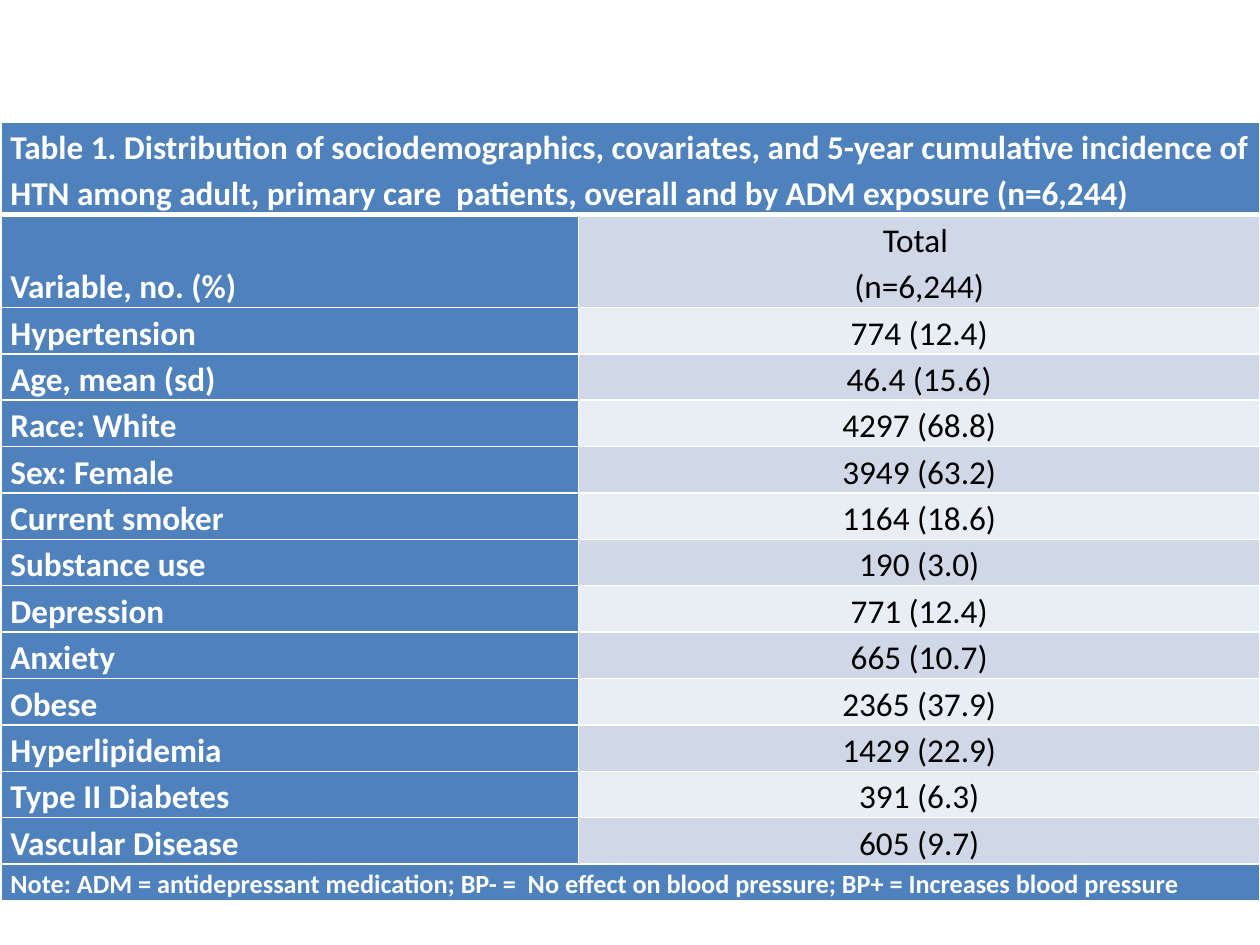
from pptx import Presentation
from pptx.dml.color import RGBColor
from pptx.enum.text import MSO_ANCHOR, PP_ALIGN
from pptx.oxml import parse_xml
from pptx.oxml.ns import nsdecls
from pptx.util import Cm, Pt

TITLE = ("Table 1. Distribution of sociodemographics, covariates, and 5-year cumulative "
         "incidence of HTN among adult, primary care  patients, overall and by ADM "
         "exposure (n=6,244)")
NOTE = ("Note: ADM = antidepressant medication; BP- =  No effect on blood pressure; "
        "BP+ = Increases blood pressure")
ROWS = [
    ("Variable, no. (%)", "Total \n(n=6,244)"),
    ("Hypertension", "774 (12.4)"),
    ("Age, mean (sd)", "46.4 (15.6)"),
    ("Race: White", "4297 (68.8)"),
    ("Sex: Female", "3949 (63.2)"),
    ("Current smoker", "1164 (18.6)"),
    ("Substance use", "190 (3.0)"),
    ("Depression", "771 (12.4)"),
    ("Anxiety", "665 (10.7)"),
    ("Obese", "2365 (37.9)"),
    ("Hyperlipidemia", "1429 (22.9)"),
    ("Type II Diabetes", "391 (6.3)"),
    ("Vascular Disease", "605 (9.7)"),
]
BLUE, WHITE, BLACK = "4F81BD", "FFFFFF", "000000"
BANDS = ("D0D8E8", "E9EDF4")
COLS = (11.63, 13.74)
HEIGHTS = [1.75, 1.75] + [0.84] * (len(ROWS) - 1) + [0.66]
TOP, HEIGHT = 2.46, 15.52


def rgb(value):
    return RGBColor.from_string(value)


def set_borders(cell, bottom):
    tc_pr = cell._tc.get_or_add_tcPr()
    for side, width in (("L", 1), ("R", 1), ("T", 1), ("B", bottom)):
        tc_pr.append(parse_xml(
            f'<a:ln{side} {nsdecls("a")} w="{Pt(width)}"><a:solidFill>'
            f'<a:srgbClr val="{WHITE}"/></a:solidFill></a:ln{side}>'))


def fill_cell(cell, text, fill=BLUE, color=WHITE, bold=True,
              align=PP_ALIGN.LEFT, size=19, bottom=1):
    set_borders(cell, bottom)
    cell.fill.solid()
    cell.fill.fore_color.rgb = rgb(fill)
    cell.margin_left = cell.margin_right = Cm(0.18)
    cell.margin_top = cell.margin_bottom = 0
    cell.vertical_anchor = MSO_ANCHOR.BOTTOM
    cell.text = text
    for p in cell.text_frame.paragraphs:
        p.alignment = align
        p.line_spacing = 1.15
        p.font.name = "Calibri"
        p.font.size = Pt(size)
        p.font.bold = bold
        p.font.color.rgb = rgb(color)


prs = Presentation()
prs.slide_width, prs.slide_height = Cm(25.4), Cm(19.05)
s = prs.slides.add_slide(prs.slide_layouts[6])
frame = s.shapes.add_table(len(HEIGHTS), len(COLS), Cm(0.03), Cm(TOP),
                           Cm(sum(COLS)), Cm(HEIGHT))
table = frame.table
for column, width in zip(table.columns, COLS):
    column.width = Cm(width)
for row, height in zip(table.rows, HEIGHTS):
    row.height = Cm(height)
frame.height = Cm(HEIGHT)

last = len(HEIGHTS) - 1
for i in (0, last):
    table.cell(i, 0).merge(table.cell(i, 1))
fill_cell(table.cell(0, 0), TITLE, bottom=3)
fill_cell(table.cell(last, 0), NOTE, size=15)
for i, (label, value) in enumerate(ROWS):
    fill_cell(table.cell(i + 1, 0), label)
    fill_cell(table.cell(i + 1, 1), value, BANDS[i % 2], BLACK, False, PP_ALIGN.CENTER)

prs.save("out.pptx")
